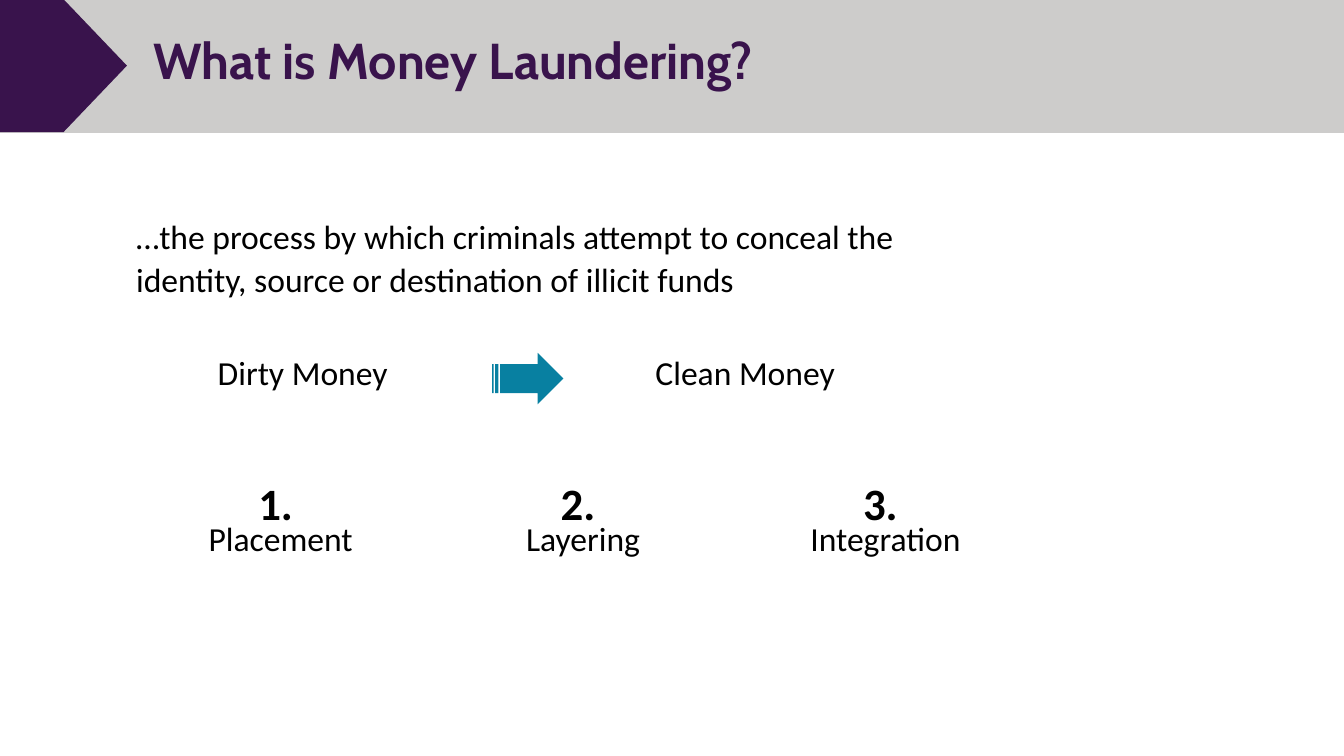
from pptx import Presentation
from pptx.dml.color import RGBColor
from pptx.enum.shapes import MSO_SHAPE
from pptx.enum.text import MSO_ANCHOR, MSO_AUTO_SIZE, PP_ALIGN
from pptx.util import Cm, Pt

RECT, PENTAGON = MSO_SHAPE.RECTANGLE, MSO_SHAPE.PENTAGON
CARD, STRIPED_ARROW = MSO_SHAPE.ROUND_2_DIAG_RECTANGLE, MSO_SHAPE.STRIPED_RIGHT_ARROW
MIDDLE, CENTER = MSO_ANCHOR.MIDDLE, PP_ALIGN.CENTER
GROW = MSO_AUTO_SIZE.SHAPE_TO_FIT_TEXT

# Content
TITLE = "What is Money Laundering?"
DEFINITION = ("…the process by which criminals attempt to conceal the "
              "identity, source or destination of illicit funds")
MONEY_STATES = ["Dirty Money", "Clean Money"]
STAGES = ["Placement", "Layering", "Integration"]

# Style and layout (lengths in cm)
PURPLE, GREY, TEAL, WHITE, BLACK = "39134C", "CDCCCB", "0880A1", "FFFFFF", "000000"
SLIDE_W, SLIDE_H = 33.87, 19.05
HEADER_H = 3.35
CARDS_LEFT = 3.53
MONEY_TOP, MONEY_W, MONEY_H, MONEY_STEP = 8.64, 8.2, 1.75, 11.15
STAGE_TOP, STAGE_W, STAGE_H, STAGE_STEP = 12.04, 7.09, 2.59, 7.62
CARD_INSET = 0.41

prs = Presentation()
prs.slide_width, prs.slide_height = Cm(SLIDE_W), Cm(SLIDE_H)
slide = prs.slides.add_slide(prs.slide_layouts[6])


def color(hex_code):
    return RGBColor.from_string(hex_code)


def add_block(preset, left, top, width, height, fill):
    block = slide.shapes.add_shape(preset, Cm(left), Cm(top), Cm(width), Cm(height))
    block.shadow.inherit = False
    block.fill.solid()
    block.fill.fore_color.rgb = color(fill)
    block.line.fill.background()
    return block


def style(paragraph, text, size, spacing, bold=False, font="Calibri", ink=BLACK):
    paragraph.text = text
    paragraph.line_spacing = spacing
    paragraph.font.name = font
    paragraph.font.size = Pt(size)
    paragraph.font.bold = bold
    paragraph.font.color.rgb = color(ink)


def add_card(left, top, width, height, lines):
    """White card with centred (text, size, bold) lines."""
    frame = add_block(CARD, left, top, width, height, WHITE).text_frame
    frame.word_wrap = True
    frame.auto_size = GROW
    frame.vertical_anchor = MIDDLE
    frame.margin_left = frame.margin_right = Cm(CARD_INSET)
    frame.margin_top = frame.margin_bottom = Cm(CARD_INSET)
    for i, (text, size, bold) in enumerate(lines):
        paragraph = frame.add_paragraph() if i else frame.paragraphs[0]
        style(paragraph, text, size, Pt(20.8), bold)
        paragraph.alignment = CENTER


def add_text(left, top, width, height):
    frame = slide.shapes.add_textbox(Cm(left), Cm(top), Cm(width), Cm(height)).text_frame
    frame.word_wrap = True
    return frame


# Header band and title
add_block(RECT, 0, 0, SLIDE_W, HEADER_H, GREY)
add_block(PENTAGON, 0, -0.02, 3.2, HEADER_H, PURPLE)
title = add_text(3.61, 0.89, 27.64, 1.42)
title.vertical_anchor = MIDDLE
style(title.paragraphs[0], TITLE, 36, 0.9, True, "Cabin", PURPLE)

# Definition
definition = add_text(3.18, 5.26, 19.99, 2.46)
definition.auto_size = GROW
style(definition.paragraphs[0], DEFINITION, 24, Pt(30.6))
definition.paragraphs[0].space_after = Pt(6)

# Dirty money becomes clean money
for i, state in enumerate(MONEY_STATES):
    add_card(CARDS_LEFT + i * MONEY_STEP, MONEY_TOP, MONEY_W, MONEY_H,
             [(state, 24, False)])
arrow = add_block(STRIPED_ARROW, 12.4, 8.89, 1.8, 1.3, TEAL)
arrow.adjustments[0] = 0.56
arrow.adjustments[1] = 0.5

# Numbered stages
for i, stage in enumerate(STAGES):
    add_card(CARDS_LEFT + i * STAGE_STEP, STAGE_TOP, STAGE_W, STAGE_H,
             [(f"{i + 1}. ", 32, True), (stage, 24, False)])

prs.save("out.pptx")
